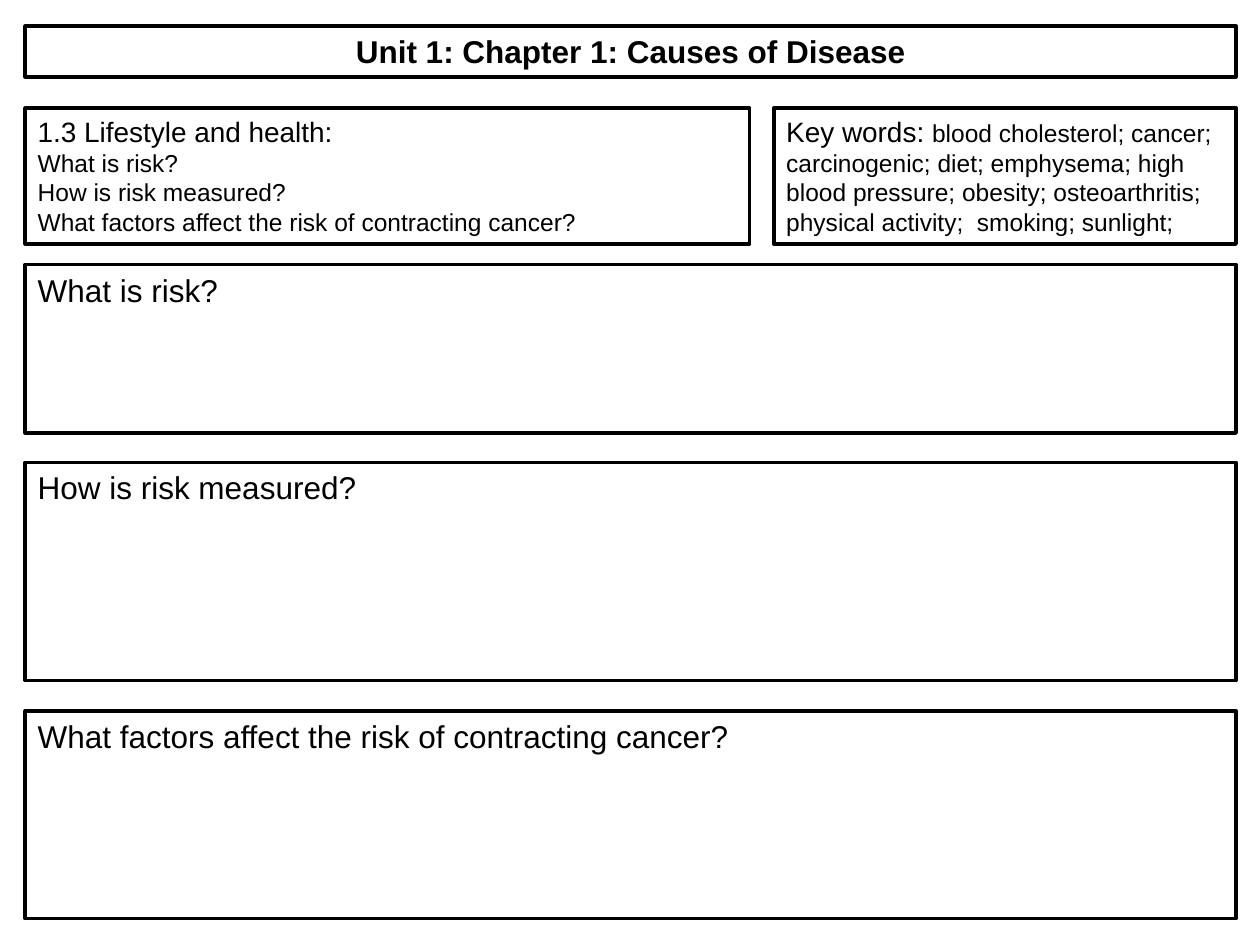
"""Build a worksheet slide on lifestyle, health and risk."""
from pptx import Presentation
from pptx import util as u
from pptx.dml.color import RGBColor
from pptx.enum import shapes, text

BLACK = RGBColor(0, 0, 0)
WHITE = RGBColor(255, 255, 255)
LEFT, WIDE = 0.51, 24.41

deck = Presentation()
deck.slide_width, deck.slide_height = u.Cm(25.4), u.Cm(19.05)
slide = deck.slides.add_slide(deck.slide_layouts[6])


def write(para, words, size=18, bold=False, align=text.PP_ALIGN.LEFT):
    para.alignment = align
    run = para.add_run()
    run.text = words
    run.font.name = "Arial"
    run.font.size = u.Pt(size)
    run.font.bold = bold
    run.font.color.rgb = BLACK


def panel(left, top, width, height):
    box = slide.shapes.add_shape(
        shapes.MSO_SHAPE.RECTANGLE, u.Cm(left), u.Cm(top), u.Cm(width), u.Cm(height))
    box.shadow.inherit = False
    box.fill.solid()
    box.fill.fore_color.rgb = WHITE
    box.line.color.rgb = BLACK
    box.line.width = u.Pt(2)
    frame = box.text_frame
    frame.word_wrap = True
    frame.vertical_anchor = text.MSO_ANCHOR.TOP
    return frame


title = panel(LEFT, 0.53, WIDE, 1.02)
write(title.paragraphs[0], "Unit 1: Chapter 1: Causes of Disease",
      bold=True, align=text.PP_ALIGN.CENTER)

tasks = [
    ("What is risk?", 5.33, 3.4),
    ("How is risk measured?", 9.32, 4.4),
    ("What factors affect the risk of contracting cancer?", 14.33, 4.19),
]

goals = panel(LEFT, 2.18, 14.6, 2.74)
write(goals.paragraphs[0], "1.3 Lifestyle and health:", size=16)
for task, top, height in tasks:
    write(goals.add_paragraph(), task, size=14)

terms = panel(15.6, 2.18, 9.32, 2.74).paragraphs[0]
write(terms, "Key words: ", size=16)
write(terms, "blood cholesterol; cancer; carcinogenic; diet; emphysema; high "
      "blood pressure; obesity; osteoarthritis; physical activity;  smoking; "
      "sunlight;", size=14)

for task, top, height in tasks:
    write(panel(LEFT, top, WIDE, height).paragraphs[0], task)

deck.save("out.pptx")
